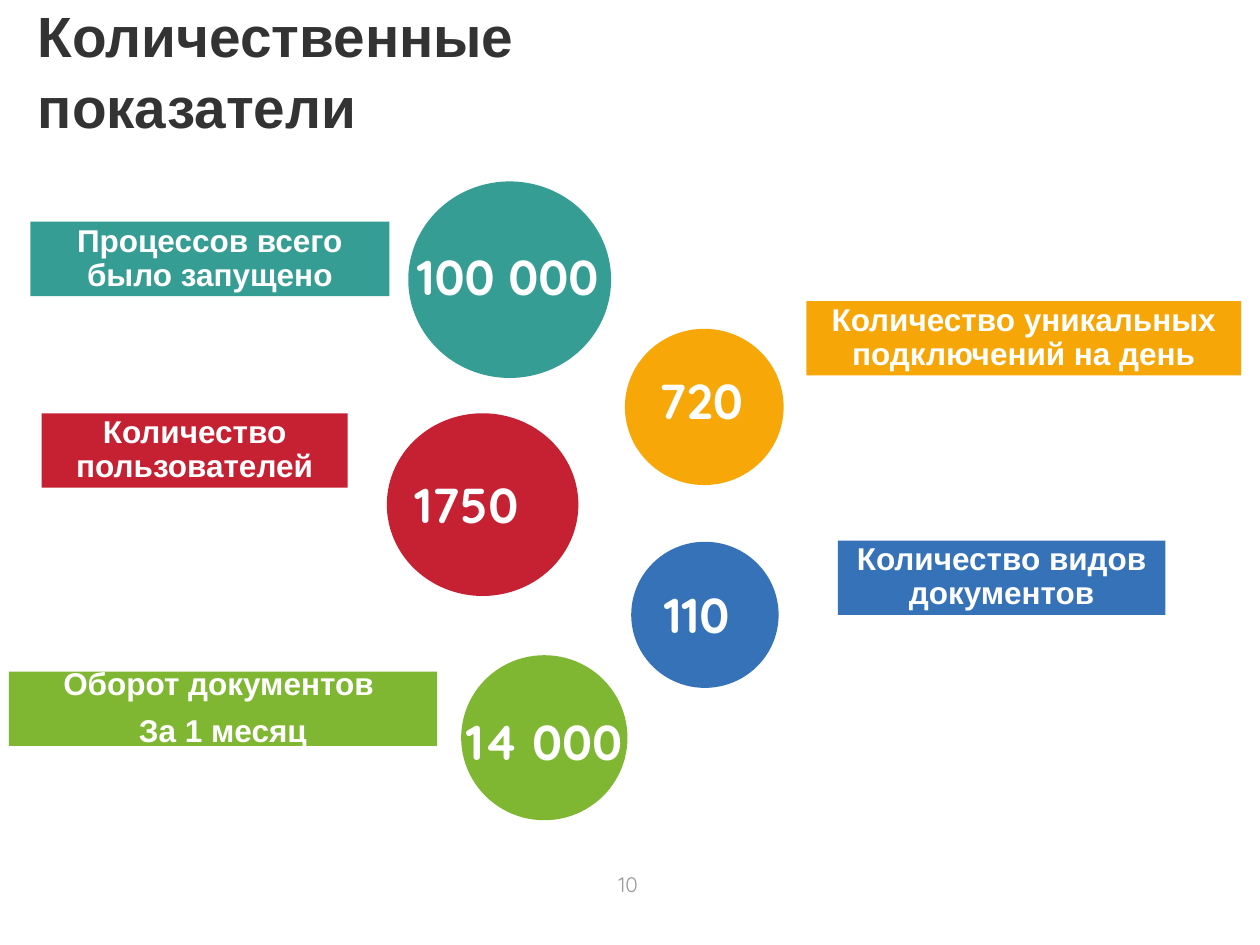
from pptx import Presentation
from pptx.dml.color import RGBColor
from pptx.enum.shapes import MSO_SHAPE
from pptx.enum.text import MSO_ANCHOR, MSO_AUTO_SIZE, PP_ALIGN
from pptx.util import Inches, Pt

OVAL, RECTANGLE = MSO_SHAPE.OVAL, MSO_SHAPE.RECTANGLE
TOP, MIDDLE, BOTTOM = MSO_ANCHOR.TOP, MSO_ANCHOR.MIDDLE, MSO_ANCHOR.BOTTOM
LEFT, CENTER = PP_ALIGN.LEFT, PP_ALIGN.CENTER
TITLE_ONLY = 5

COLORS = {
    "teal": "369D94", "red": "C62033", "orange": "F7A707", "amber": "F6A707",
    "blue": "3672B7", "green": "80B732",
    "white": "FFFFFF", "dark": "333333", "gray": "999999",
}

# Content: geometry in inches
TITLE = "Количественные показатели"
PAGE_NUMBER = "10"
LABEL_HEIGHT, VALUE_HEIGHT = 0.59, 0.57
INDICATORS = [
    # value, value (left, top, width), circle box, circle colour,
    # label lines, label (left, top, width), label colour
    ("1750", (3.19, 3.72, 1.09), (3.07, 3.28, 1.52, 1.45), "red",
     ["Количество пользователей"], (0.33, 3.28, 2.43), "red"),
    ("720", (5.13, 2.89, 1.09), (4.96, 2.61, 1.26, 1.24), "orange",
     ["Количество уникальных подключений на день"], (6.4, 2.39, 3.45), "amber"),
    ("110", (5.17, 4.59, 1.09), (5.01, 4.3, 1.17, 1.16), "blue",
     ["Количество видов документов"], (6.65, 4.29, 2.6), "blue"),
    ("14 000", (3.6, 5.6, 1.46), (3.66, 5.2, 1.32, 1.31), "green",
     ["Оборот документов ", "За 1 месяц"], (0.07, 5.33, 3.4), "green"),
    ("100 000", (3.21, 1.91, 1.76), (3.24, 1.44, 1.61, 1.56), "teal",
     ["Процессов всего было запущено"], (0.24, 1.76, 2.85), "teal"),
]

# Text formats
TITLE_FONT = {"name": "Arial", "size": Pt(32.4), "bold": True}
LABEL_FONT = {"name": "Arial", "size": Pt(18), "bold": True}
VALUE_FONT = {"name": "Quicksand", "size": Pt(28), "bold": True}
PAGE_FONT = {"name": "Quicksand", "size": Pt(12), "bold": False}
LABEL_SPACING = {"line_spacing": 0.9, "space_after": Pt(7)}


def apply(target, values):
    for name, value in values.items():
        setattr(target, name, value)


def write(box, lines, font, color, anchor=TOP, align=LEFT, spacing=None, inset=None):
    frame = box.text_frame
    apply(frame, {"word_wrap": True, "auto_size": MSO_AUTO_SIZE.NONE,
                  "vertical_anchor": anchor})
    if inset is not None:
        for side in ("left", "top", "right", "bottom"):
            setattr(frame, f"margin_{side}", Inches(inset))
    for index, line in enumerate(lines):
        para = frame.add_paragraph() if index else frame.paragraphs[0]
        apply(para, {"alignment": align, **(spacing or {})})
        span = para.add_run()
        span.text = line
        apply(span.font, font)
        span.font.color.rgb = RGBColor.from_string(COLORS[color])


def add_block(page, kind, place, color):
    block = page.shapes.add_shape(kind, *map(Inches, place))
    block.shadow.inherit = False
    block.fill.solid()
    block.fill.fore_color.rgb = RGBColor.from_string(COLORS[color])
    block.line.fill.background()
    return block


def add_text(page, place, *content, **layout):
    box = page.shapes.add_textbox(*map(Inches, place))
    write(box, *content, **layout)


def main():
    deck = Presentation()
    deck.slide_width, deck.slide_height = Inches(10), Inches(7.5)
    page = deck.slides.add_slide(deck.slide_layouts[TITLE_ONLY])

    # Title
    title = page.shapes.title
    apply(title, {"left": Inches(0.2), "top": Inches(0.26),
                  "width": Inches(6.05), "height": Inches(0.9)})
    write(title, [TITLE], TITLE_FONT, "dark", anchor=BOTTOM,
          spacing={"line_spacing": 1.04})

    # Circles with their values and labels
    for value, spot, circle, fill, lines, strip, strip_fill in INDICATORS:
        add_block(page, OVAL, circle, fill)
        label = add_block(page, RECTANGLE, (*strip, LABEL_HEIGHT), strip_fill)
        write(label, lines, LABEL_FONT, "white", anchor=MIDDLE, align=CENTER,
              spacing=LABEL_SPACING, inset=0.03)
        add_text(page, (*spot, VALUE_HEIGHT), [value], VALUE_FONT, "white")

    # Page number
    add_text(page, (3.43, 6.82, 3.11, 0.4), [PAGE_NUMBER], PAGE_FONT, "gray",
             anchor=MIDDLE, align=CENTER)

    deck.save("out.pptx")


if __name__ == "__main__":
    main()
